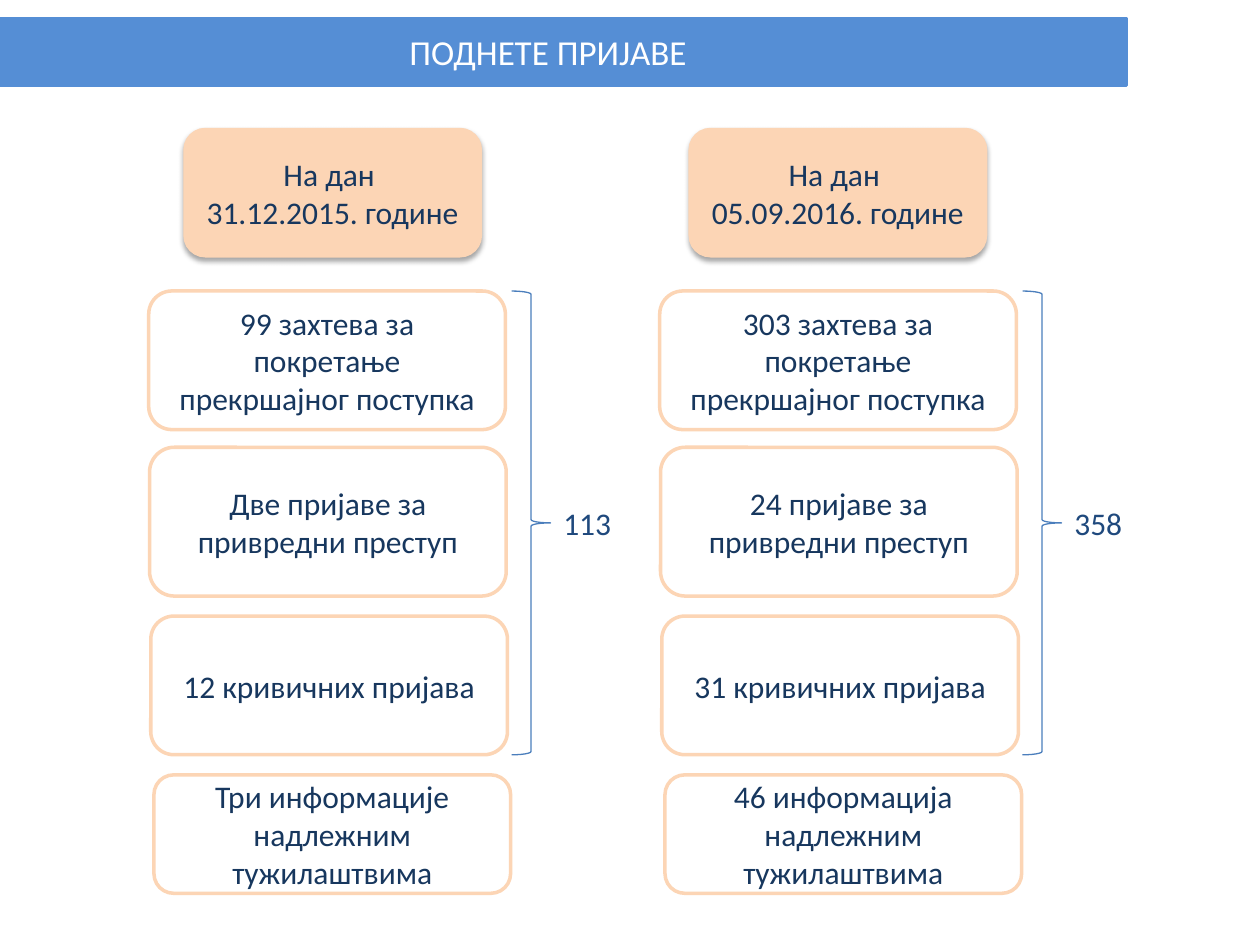
from lxml import etree
from pptx import Presentation
from pptx.dml.color import RGBColor
from pptx.enum.shapes import MSO_SHAPE as Shape
from pptx.enum.text import MSO_ANCHOR as Anchor, PP_ALIGN as Align
from pptx.oxml import parse_xml
from pptx.oxml.ns import nsdecls
from pptx.util import Pt

BANNER_BLUE = RGBColor(0x55, 0x8E, 0xD5)
BRACE_BLUE = RGBColor(0x4B, 0x7E, 0xBC)
TOTAL_BLUE = RGBColor(0x1F, 0x49, 0x7D)
NAVY = RGBColor(0x17, 0x37, 0x5E)
PEACH = RGBColor(0xFC, 0xD5, 0xB5)
WHITE = RGBColor(0xFF, 0xFF, 0xFF)

CARD_WIDTH = 203.8
CARD_ROWS = [(85, 166.3, 79.2), (85.5, 255.6, 85), (86.2, 352.1, 79.2), (88, 442.8, 67.7)]
COLUMN_STEP = 292
HEADER_STEP = 288.7

COLUMNS = [
    ("31.12.2015. године", "113", [
        "99 захтева за покретање прекршајног поступка",
        "Две пријаве за привредни преступ",
        "12 кривичних пријава",
        "Три информације надлежним тужилаштвима",
    ]),
    ("05.09.2016. године", "358", [
        "303 захтева за покретање прекршајног поступка",
        "24 пријаве за привредни преступ",
        "31 кривичних пријава",
        "46 информација надлежним тужилаштвима",
    ]),
]


def write(shape, lines, size, color, align=Align.CENTER, wrap=True, anchor=Anchor.MIDDLE):
    frame = shape.text_frame
    frame.word_wrap = wrap
    frame.vertical_anchor = anchor
    frame.text = "\n".join(lines)
    for paragraph in frame.paragraphs:
        paragraph.alignment = align
        paragraph.font.name = "Calibri"
        paragraph.font.size = Pt(size)
        paragraph.font.color.rgb = color


def add_outlined(slide, kind, box, fill, line, weight):
    shape = slide.shapes.add_shape(kind, *map(Pt, box))
    shape.shadow.inherit = False
    if fill is None:
        shape.fill.background()
    else:
        shape.fill.solid()
        shape.fill.fore_color.rgb = fill
    shape.line.color.rgb = line
    shape.line.width = Pt(weight)
    return shape


def add_soft_shadow(shape):
    effects = shape._element.spPr.find("{*}effectLst")
    shadow = parse_xml(
        f'<a:outerShdw {nsdecls("a")} blurRad="{Pt(3.1)}" dist="{Pt(1.8)}" dir="5400000" '
        'rotWithShape="0"><a:srgbClr val="000000"><a:alpha val="35000"/></a:srgbClr></a:outerShdw>')
    effects.append(shadow)


def add_banner(slide, title):
    add_outlined(slide, Shape.RECTANGLE, (0, 10.8, 643.7, 38.2), BANNER_BLUE, BANNER_BLUE, 2)
    box = slide.shapes.add_textbox(Pt(0), Pt(10.8), Pt(626.4), Pt(37.4))
    write(box, [title], 20, WHITE)


def add_header(slide, left, date):
    header = add_outlined(slide, Shape.FLOWCHART_ALTERNATE_PROCESS,
                          (left, 73.4, 170, 73.4), PEACH, PEACH, 0.75)
    add_soft_shadow(header)
    write(header, ["На дан ", date], 18, NAVY)


def add_card(slide, box, text):
    card = add_outlined(slide, Shape.FLOWCHART_ALTERNATE_PROCESS, box, WHITE, PEACH, 2)
    write(card, [text], 18, NAVY)


def add_total(slide, offset, total):
    add_outlined(slide, Shape.RIGHT_BRACE, (292.3 + offset, 166.3, 22.3, 265),
                 None, BRACE_BLUE, 0.75)
    label = slide.shapes.add_textbox(Pt(314.8 + offset), Pt(284.4), Pt(42.5), Pt(28.8))
    write(label, [total], 18, TOTAL_BLUE, Align.LEFT, False, Anchor.TOP)


def main():
    presentation = Presentation()
    presentation.slide_width = Pt(720)
    presentation.slide_height = Pt(540)
    slide = presentation.slides.add_slide(presentation.slide_layouts[6])
    add_banner(slide, "ПОДНЕТЕ ПРИЈАВЕ")
    for index, (date, total, texts) in enumerate(COLUMNS):
        offset = index * COLUMN_STEP
        add_header(slide, 105.1 + index * HEADER_STEP, date)
        for (left, top, height), text in zip(CARD_ROWS, texts):
            add_card(slide, (left + offset, top, CARD_WIDTH, height), text)
        add_total(slide, offset, total)
    presentation.save("out.pptx")


if __name__ == "__main__":
    main()
